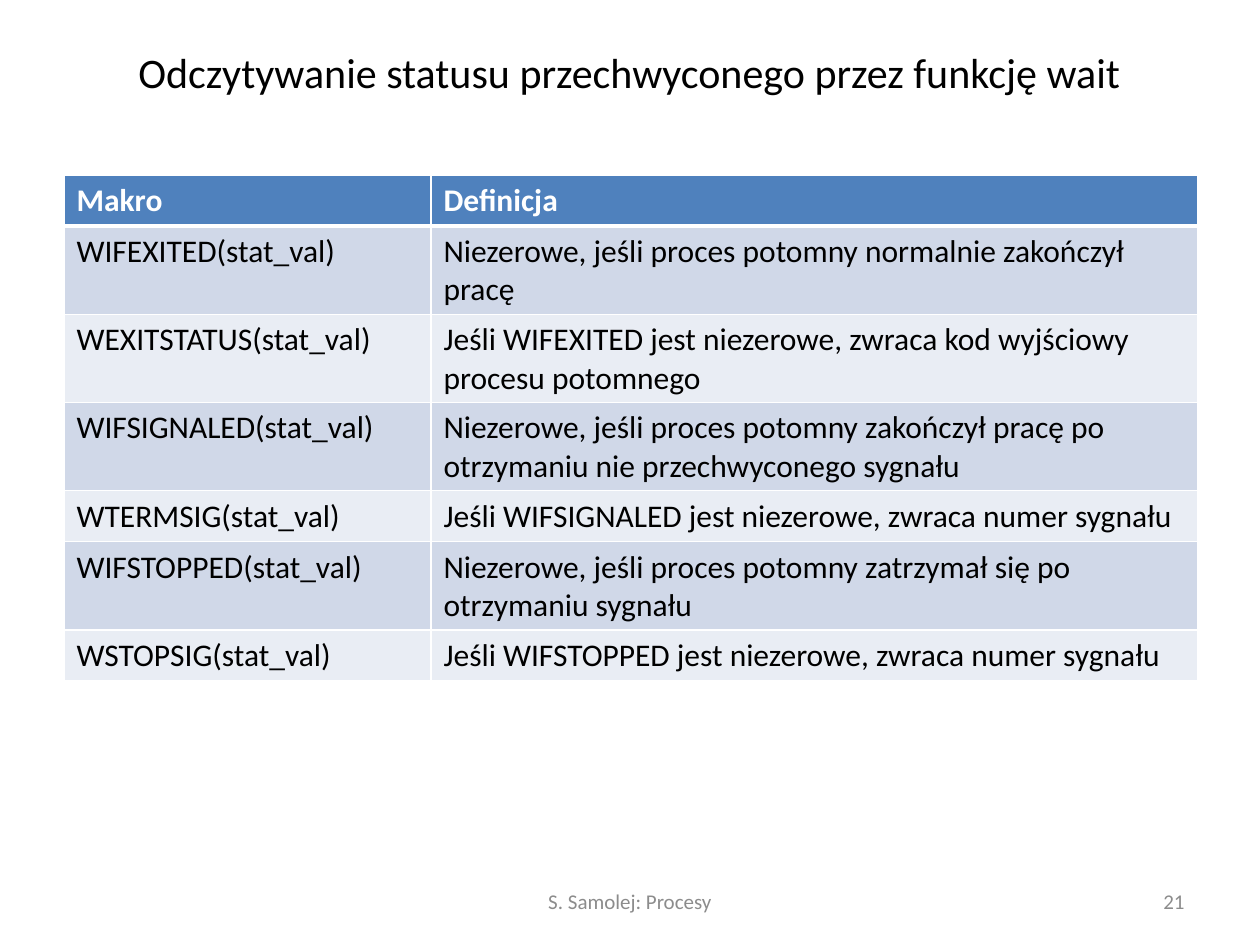
from collections import namedtuple
from dataclasses import dataclass

from lxml.etree import SubElement
from pptx import Presentation
from pptx.dml.color import RGBColor
from pptx.enum.text import MSO_ANCHOR, PP_ALIGN
from pptx.oxml.ns import qn
from pptx.util import Emu, Pt

PX = 914400 // 126  # EMU in one px

Box = namedtuple("Box", "left top width height")


@dataclass(frozen=True)
class Theme:
    font: str = "Calibri"
    title_size: int = 24
    table_size: int = 18
    footer_size: int = 12
    ink: str = "000000"
    paper: str = "FFFFFF"
    muted: str = "8C8C8C"
    header: str = "4F81BD"
    bands: tuple = ("D0D8E8", "E9EDF4")
    rule: int = 1
    header_rule: int = 3


THEME = Theme()

MACROS = [
    ("Makro", "Definicja"),
    ("WIFEXITED(stat_val)", "Niezerowe, jeśli proces potomny normalnie zakończył pracę"),
    ("WEXITSTATUS(stat_val)",
     "Jeśli WIFEXITED jest niezerowe, zwraca kod wyjściowy procesu potomnego"),
    ("WIFSIGNALED(stat_val)",
     "Niezerowe, jeśli proces potomny zakończył pracę po otrzymaniu nie przechwyconego sygnału"),
    ("WTERMSIG(stat_val)", "Jeśli WIFSIGNALED jest niezerowe, zwraca numer sygnału"),
    ("WIFSTOPPED(stat_val)",
     "Niezerowe, jeśli proces potomny zatrzymał się po otrzymaniu sygnału"),
    ("WSTOPSIG(stat_val)", "Jeśli WIFSTOPPED jest niezerowe, zwraca numer sygnału"),
]


def px(*lengths):
    return [Emu(length * PX) for length in lengths]


def format_text(frame, size, color, bold=False, align=PP_ALIGN.LEFT):
    for para in frame.paragraphs:
        para.alignment = align
        for span in para.runs:
            span.font.name = THEME.font
            span.font.size = Pt(size)
            span.font.bold = bold
            span.font.color.rgb = RGBColor.from_string(color)


def add_label(slide, box, text, size, color, align):
    frame = slide.shapes.add_textbox(*px(*box)).text_frame
    frame.word_wrap = True
    frame.vertical_anchor = MSO_ANCHOR.MIDDLE
    frame.text = text
    format_text(frame, size, color, align=align)


def add_border(cell, side, points):
    line = SubElement(cell._tc.get_or_add_tcPr(), qn(f"a:ln{side}"), w=str(Pt(points)))
    SubElement(SubElement(line, qn("a:solidFill")), qn("a:srgbClr"), val=THEME.paper)


def style_cell(cell, row_index):
    is_header = row_index == 0
    # Borders come before the fill in the cell properties
    for side in "LRTB":
        next_to_header = (row_index, side) in ((0, "B"), (1, "T"))
        add_border(cell, side, THEME.header_rule if next_to_header else THEME.rule)
    fill = THEME.header if is_header else THEME.bands[(row_index - 1) % 2]
    cell.fill.solid()
    cell.fill.fore_color.rgb = RGBColor.from_string(fill)
    format_text(cell.text_frame, THEME.table_size,
                THEME.paper if is_header else THEME.ink, bold=is_header)


def add_title(slide, box):
    add_label(slide, box, "Odczytywanie statusu przechwyconego przez funkcję wait",
              THEME.title_size, THEME.ink, PP_ALIGN.CENTER)


def add_macro_table(slide, box):
    name_width = 367
    table = slide.shapes.add_table(len(MACROS), len(MACROS[0]), *px(*box)).table
    widths = px(name_width, box.width - name_width)
    for column, width in zip(table.columns, widths):
        column.width = width
    for row_index, texts in enumerate(MACROS):
        for column_index, text in enumerate(texts):
            cell = table.cell(row_index, column_index)
            cell.text = text
            style_cell(cell, row_index)


def add_footer(slide, box):
    name_width, number_width = 400, 294
    name_left = box.left + (box.width - name_width) // 2
    number_left = box.left + box.width - number_width
    # Author and topic in the middle, page number on the right
    for left, width, text, align in (
        (name_left, name_width, "S. Samolej: Procesy", PP_ALIGN.CENTER),
        (number_left, number_width, "21", PP_ALIGN.RIGHT),
    ):
        add_label(slide, Box(left, box.top, width, box.height), text,
                  THEME.footer_size, THEME.muted, align)


def main():
    deck = Presentation()
    deck.slide_width, deck.slide_height = px(1260, 945)
    slide = deck.slides.add_slide(deck.slide_layouts[6])
    add_title(slide, Box(63, 38, 1133, 68))
    add_macro_table(slide, Box(64, 175, 1134, 357))
    add_footer(slide, Box(63, 876, 1134, 50))
    deck.save("out.pptx")


if __name__ == "__main__":
    main()
